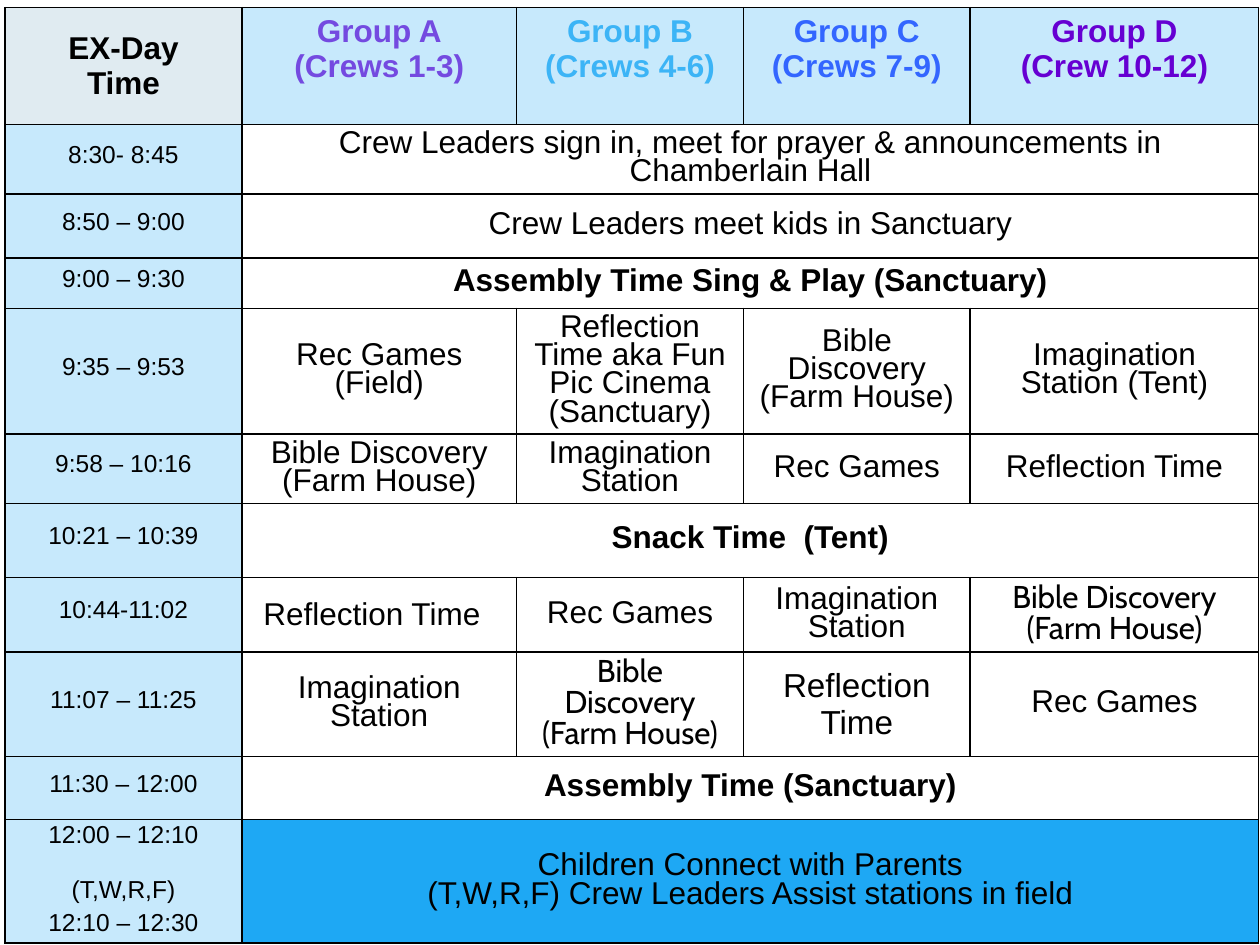
from lxml import etree
from pptx import Presentation
from pptx.dml.color import RGBColor
from pptx.enum.text import MSO_ANCHOR, PP_ALIGN
from pptx.oxml.ns import qn
from pptx.util import Inches, Pt

CENTER, LEFT = PP_ALIGN.CENTER, PP_ALIGN.LEFT
MIDDLE, TOP = MSO_ANCHOR.MIDDLE, MSO_ANCHOR.TOP
BLANK_LAYOUT = 6

COLORS = {
    "black": "000000",
    "corner": "066092",
    "pale": "C7E9FC",
    "bright": "1EA8F4",
}
CORNER_OPACITY = 12

COLUMN_WIDTHS = [1.88, 2.18, 1.8, 1.8, 2.29]
ROW_HEIGHTS = [0.93, 0.49, 0.51, 0.4, 0.42, 0.55, 0.59, 0.55, 0.55, 0.5, 0.6]

CORNER = "EX-Day\nTime"
GROUPS = [
    ("Group A\n(Crews 1-3)", "744AE0"),
    ("Group B\n(Crews 4-6)", "3CB4F6"),
    ("Group C\n(Crews 7-9)", "3366FF"),
    ("Group D\n(Crew 10-12)", "6600D2"),
]
BIBLE = "Bible Discovery\n(Farm House)"
SCHEDULE = [
    ("8:30- 8:45", ["Crew Leaders sign in, meet for prayer & announcements in Chamberlain Hall"]),
    ("8:50 – 9:00", ["Crew Leaders meet kids in Sanctuary"]),
    ("9:00 – 9:30", ["Assembly Time Sing & Play (Sanctuary)"]),
    ("9:35 – 9:53", ["Rec Games\n(Field)", "Reflection Time aka Fun Pic Cinema (Sanctuary)",
                     BIBLE, "Imagination Station (Tent)"]),
    ("9:58 – 10:16", [BIBLE, "Imagination Station", "Rec Games", "Reflection Time"]),
    ("10:21 – 10:39", ["Snack Time  (Tent)"]),
    ("10:44-11:02", ["Reflection Time", "Rec Games", "Imagination Station", BIBLE]),
    ("11:07 – 11:25", ["Imagination Station", BIBLE, "Reflection Time", "Rec Games"]),
    ("11:30 – 12:00", ["Assembly Time (Sanctuary)"]),
    ("12:00 – 12:10\n(T,W,R,F)\n12:10 – 12:30",
     ["Children Connect with Parents\n(T,W,R,F) Crew Leaders Assist stations in field"]),
]
LAST_ROW = len(SCHEDULE)
BOLD_ROWS = {3, 6, 9}
SPECIAL_FORMATS = {
    (7, 1): {"align": LEFT, "spacing": 1.0, "margin_left": 0.17},
    (7, 4): {"font": "Cabin"},
    (8, 2): {"font": "Cabin"},
    (8, 3): {"size": 19, "spacing": 1.0},
    (LAST_ROW, 1): {"fill": COLORS["bright"]},
}


def write_cell(cell, text, size=18, font="Arial", color=COLORS["black"], bold=False,
               align=CENTER, anchor=MIDDLE, spacing=0.8, margin_left=0.1, fill=None):
    cell.vertical_anchor = anchor
    cell.margin_left, cell.margin_right = Inches(margin_left), Inches(0.1)
    cell.margin_top = cell.margin_bottom = Inches(0.05)
    if fill:
        cell.fill.solid()
        cell.fill.fore_color.rgb = RGBColor.from_string(fill)
    cell.text = text
    for paragraph in cell.text_frame.paragraphs:
        paragraph.alignment = align
        paragraph.line_spacing = spacing
        for run in paragraph.runs:
            run.font.size = Pt(size)
            run.font.name = font
            run.font.bold = bold
            run.font.color.rgb = RGBColor.from_string(color)


def add_borders(cell):
    properties = cell._tc.get_or_add_tcPr()
    for index, side in enumerate(("a:lnL", "a:lnR", "a:lnT", "a:lnB")):
        line = etree.Element(qn(side), w=str(Pt(1)))
        solid = etree.SubElement(line, qn("a:solidFill"))
        etree.SubElement(solid, qn("a:srgbClr"), val=COLORS["black"])
        properties.insert(index, line)


def build_table(slide):
    table = slide.shapes.add_table(
        len(ROW_HEIGHTS), len(COLUMN_WIDTHS), Inches(0.04), Inches(0.06),
        Inches(sum(COLUMN_WIDTHS)), Inches(sum(ROW_HEIGHTS))).table
    table.first_row = table.horz_banding = False
    for column, width in zip(table.columns, COLUMN_WIDTHS):
        column.width = Inches(width)
    for row, height in zip(table.rows, ROW_HEIGHTS):
        row.height = Inches(height)
    for cell in table.iter_cells():
        cell.fill.background()
        add_borders(cell)
    return table


def fill_header(table):
    corner = table.cell(0, 0)
    write_cell(corner, CORNER, bold=True, spacing=1.0, fill=COLORS["corner"])
    tint = corner._tc.tcPr.find(qn("a:solidFill")).find(qn("a:srgbClr"))
    etree.SubElement(tint, qn("a:alpha"), val=str(CORNER_OPACITY * 1000))
    for column, (name, color) in enumerate(GROUPS, start=1):
        write_cell(table.cell(0, column), name, color=color, bold=True,
                   anchor=TOP, spacing=1.0, fill=COLORS["pale"])


def fill_schedule(table):
    for row, (time, activities) in enumerate(SCHEDULE, start=1):
        write_cell(table.cell(row, 0), time, size=14, spacing=0.5, fill=COLORS["pale"])
        if len(activities) == 1:
            table.cell(row, 1).merge(table.cell(row, len(GROUPS)))
        for column, activity in enumerate(activities, start=1):
            write_cell(table.cell(row, column), activity, bold=row in BOLD_ROWS,
                       **SPECIAL_FORMATS.get((row, column), {}))
    first, second, third = table.cell(LAST_ROW, 0).text_frame.paragraphs
    first.line_spacing = 0.8
    second.line_spacing = third.line_spacing = 1.2
    second.space_before = Pt(13)


def main():
    presentation = Presentation()
    presentation.slide_width, presentation.slide_height = Inches(10), Inches(7.5)
    slide = presentation.slides.add_slide(presentation.slide_layouts[BLANK_LAYOUT])
    table = build_table(slide)
    fill_header(table)
    fill_schedule(table)
    presentation.save("out.pptx")


if __name__ == "__main__":
    main()
